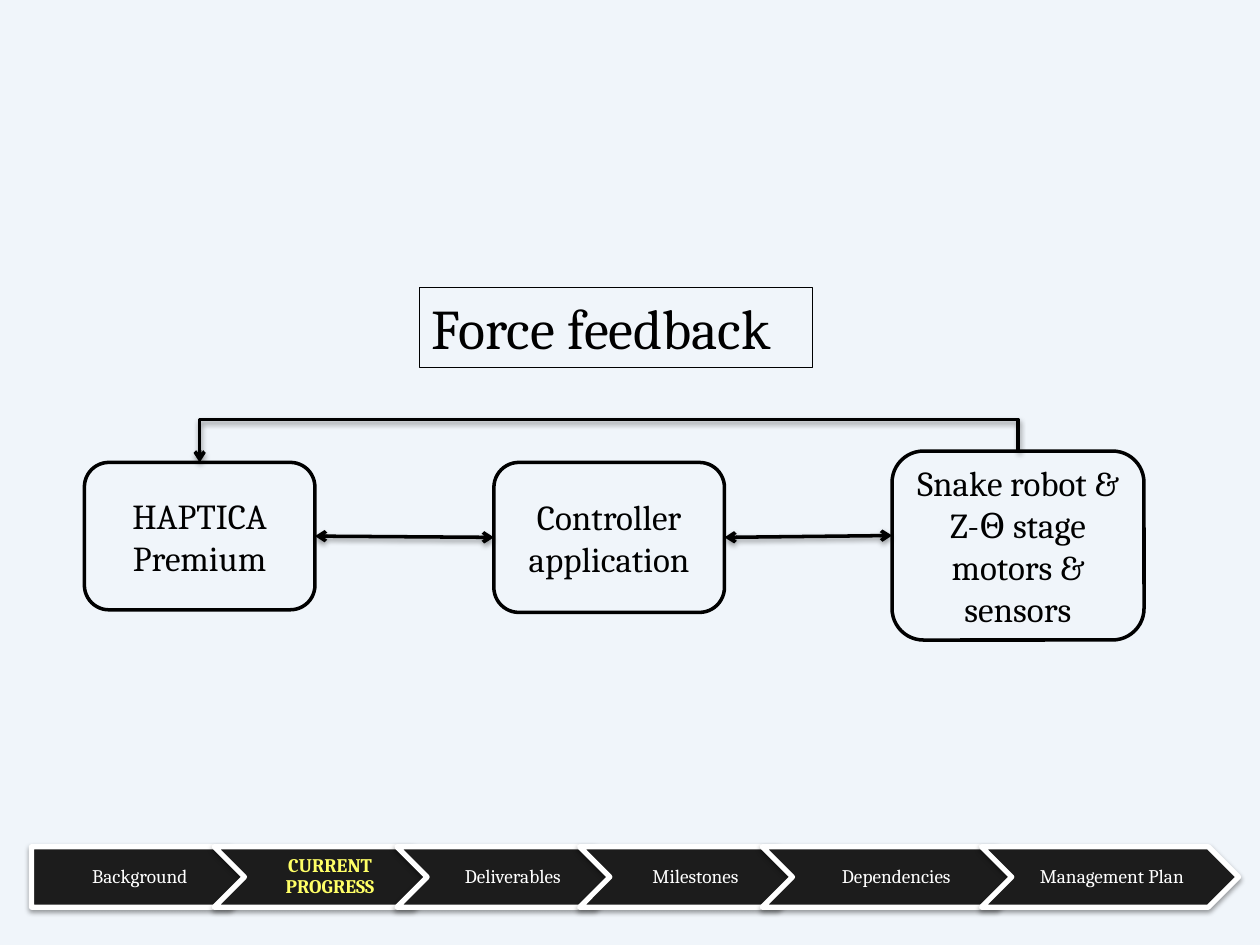
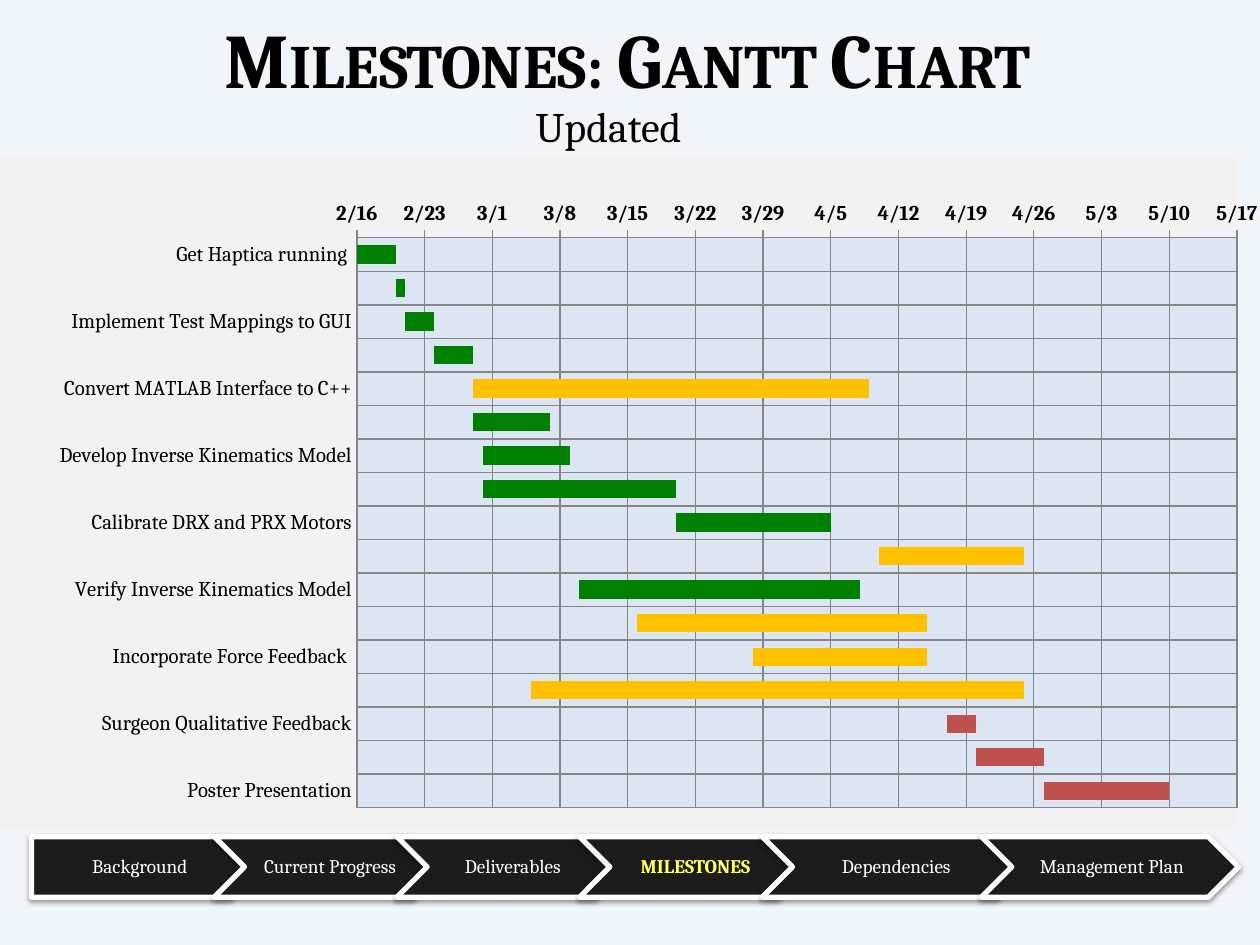
"""Builds two project slides: the force feedback loop and the Gantt chart of milestones."""
from dataclasses import dataclass

from lxml.etree import SubElement
from pptx import Presentation
from pptx.chart.data import CategoryChartData
from pptx.dml.color import RGBColor
from pptx.enum.chart import XL_CHART_TYPE as Chart, XL_TICK_MARK as Tick
from pptx.enum.shapes import MSO_CONNECTOR as Conn, MSO_SHAPE as Geo
from pptx.enum.text import MSO_ANCHOR as Anchor, MSO_AUTO_SIZE as AutoSize, PP_ALIGN as Align
from pptx.oxml import parse_xml
from pptx.oxml.ns import nsdecls, qn
from pptx.util import Inches, Pt


@dataclass(frozen=True)
class Theme:
    font: str = "Cambria"
    ink: str = "000000"
    page: str = "F0F5FA"
    nav: str = "1C1C1C"
    white: str = "FFFFFF"
    active: str = "FFFF66"
    chart_area: str = "F2F2F2"
    plot_area: str = "DCE6F2"
    grid: str = "868686"
    done: str = "008000"
    ongoing: str = "FFC000"
    planned: str = "C0504D"
    title: int = 44
    label: int = 32
    subtitle: int = 24
    card: int = 20
    axis: int = 12
    nav_text: int = 11


T = Theme()


@dataclass(frozen=True)
class Box:
    left: float
    top: float
    width: float
    height: float

    @property
    def middle(self) -> float:
        return self.left + self.width / 2

    def emu(self) -> tuple:
        return tuple(Inches(v) for v in (self.left, self.top, self.width, self.height))


@dataclass(frozen=True)
class Card:
    text: str
    box: Box


@dataclass(frozen=True)
class Section:
    name: str
    width: float = 1.81


@dataclass(frozen=True)
class Task:
    start: int
    days: int
    color: str
    name: str = ""


CARDS = (
    Card("HAPTICA Premium", Box(0.67, 3.67, 1.83, 1.17)),
    Card("Controller application", Box(3.92, 3.67, 1.83, 1.19)),
    Card("Snake robot & Z-Θ stage motors & sensors", Box(7.08, 3.58, 2, 1.5)),
)
LOOP_TOP = 3.33
LINK_Y = 4.25

SECTIONS = (
    Section("Background"),
    Section("Current Progress"),
    Section("Deliverables"),
    Section("Milestones"),
    Section("Dependencies", 2.1),
    Section("Management Plan", 2.04),
)
NAV_LEFT, NAV_HEIGHT, NAV_OVERLAP = 0.25, 0.48, 0.36

FIRST_DAY, WEEK, WEEKS = 40955, 7, 13
TASKS = (
    Task(40955, 4, T.done, "Get Haptica running "),
    Task(40959, 1, T.done),
    Task(40960, 3, T.done, "Implement Test Mappings to GUI"),
    Task(40963, 4, T.done),
    Task(40967, 41, T.ongoing, "Convert MATLAB Interface to C++"),
    Task(40967, 8, T.done),
    Task(40968, 9, T.done, "Develop Inverse Kinematics Model"),
    Task(40968, 20, T.done),
    Task(40988, 16, T.done, "Calibrate DRX and PRX Motors"),
    Task(41009, 15, T.ongoing),
    Task(40978, 29, T.done, "Verify Inverse Kinematics Model"),
    Task(40984, 30, T.ongoing),
    Task(40996, 18, T.ongoing, "Incorporate Force Feedback "),
    Task(40973, 51, T.ongoing),
    Task(41016, 3, T.planned, "Surgeon Qualitative Feedback"),
    Task(41019, 7, T.planned),
    Task(41026, 13, T.planned, "Poster Presentation"),
)


def rgb(color: str) -> RGBColor:
    return RGBColor.from_string(color)


def add_shadow(sp) -> None:
    """Gives a shape or connector the soft shadow below it."""
    spPr = sp._element.spPr
    for old in spPr.findall(qn("a:effectLst")):
        spPr.remove(old)
    spPr.append(parse_xml(
        f'<a:effectLst {nsdecls("a")}><a:outerShdw blurRad="{Pt(3.1)}" dist="{Pt(1.6)}" '
        f'dir="5400000" rotWithShape="0"><a:srgbClr val="{T.ink}"><a:alpha val="38000"/>'
        '</a:srgbClr></a:outerShdw></a:effectLst>'))


def write(sp, text: str, size: int, color: str = T.ink, bold: bool = False,
          align: Align = Align.CENTER, anchor: Anchor = Anchor.MIDDLE):
    """Writes one paragraph and returns it."""
    tf = sp.text_frame
    tf.word_wrap = True
    tf.vertical_anchor = anchor
    p = tf.paragraphs[0]
    p.alignment = align
    p.add_run().text = text
    p.font.name, p.font.size, p.font.bold = T.font, Pt(size), bold
    p.font.color.rgb = rgb(color)
    return p


def add_outline(s, geo: Geo, box: Box, weight: float, line: str = T.ink):
    """Draws an unfilled preset shape with a line."""
    sp = s.shapes.add_shape(geo, *box.emu())
    sp.shadow.inherit = False
    sp.fill.background()
    sp.line.color.rgb = rgb(line)
    sp.line.width = Pt(weight)
    return sp


def add_card(s, card: Card):
    sp = add_outline(s, Geo.ROUNDED_RECTANGLE, card.box, 2)
    write(sp, card.text, T.card)
    return sp


def add_arrow(s, kind: Conn, start: tuple, end: tuple, *ends: str):
    """Draws a shadowed connector with arrowheads at the named ends."""
    c = s.shapes.add_connector(kind, *(Inches(v) for v in (*start, *end)))
    c.line.color.rgb = rgb(T.ink)
    c.line.width = Pt(2)
    for name in ends:
        SubElement(c.line._get_or_add_ln(), qn(f"a:{name}"), type="arrow")
    add_shadow(c)
    return c


def add_loop(s, source: Box, target: Box) -> None:
    """Leads an elbow arrow from the top of one box over to the top of another."""
    span, drop = source.middle - target.middle, target.top - source.top
    x, y = (source.middle + target.middle) / 2, (source.top + target.top) / 2
    c = add_arrow(s, Conn.ELBOW, (x + drop / 2, y + span / 2),
                  (x - drop / 2, y - span / 2), "tailEnd")
    spPr = c._element.spPr
    spPr.find(qn("a:xfrm")).set("rot", "16200000")
    guides = spPr.find(qn("a:prstGeom")).find(qn("a:avLst"))
    bend = round((LOOP_TOP - source.top) / drop * 100000)
    SubElement(guides, qn("a:gd"), name="adj1", fmla=f"val {bend}")


def add_nav(s, top: float, current: str) -> None:
    """Draws the chevron band and marks the current section."""
    left = NAV_LEFT
    for i, section in enumerate(SECTIONS):
        sp = add_outline(s, Geo.CHEVRON if i else Geo.PENTAGON,
                         Box(left, top, section.width, NAV_HEIGHT), 3, T.white)
        sp.fill.solid()
        sp.fill.fore_color.rgb = rgb(T.nav)
        add_shadow(sp)
        active = section.name == current
        p = write(sp, section.name.upper() if active else section.name, T.nav_text,
                  T.active if active else T.white, active)
        p.line_spacing = 0.9
        tf = sp.text_frame
        tf.margin_left, tf.margin_right = Inches(0.05), Inches(0.02)
        tf.margin_top = tf.margin_bottom = Inches(0.03)
        left += section.width - NAV_OVERLAP


def solid(color: str):
    """Returns chart area properties with a plain fill and no line."""
    return parse_xml(f'<c:spPr {nsdecls("c", "a")}><a:solidFill><a:srgbClr val="{color}"/>'
                     '</a:solidFill><a:ln><a:noFill/></a:ln></c:spPr>')


def style_areas(chart, plot: Box) -> None:
    """Fills the chart and plot areas and places the plot by fractions."""
    space = chart._chartSpace
    space.find(qn("c:chart")).addnext(solid(T.chart_area))
    area = space.find(qn("c:chart")).find(qn("c:plotArea"))
    for old in area.findall(qn("c:layout")):
        area.remove(old)
    layout = SubElement(area, qn("c:layout"))
    area.insert(0, layout)
    manual = SubElement(layout, qn("c:manualLayout"))
    for tag, val in (("layoutTarget", "inner"), ("xMode", "edge"), ("yMode", "edge"),
                     ("x", plot.left), ("y", plot.top), ("w", plot.width), ("h", plot.height)):
        SubElement(manual, qn(f"c:{tag}"), val=str(val))
    area.append(solid(T.plot_area))


def add_gantt(s, box: Box) -> None:
    """Draws the tasks as stacked bars behind an invisible start series."""
    data = CategoryChartData()
    data.categories = [task.name for task in TASKS]
    data.add_series("Series 1", [task.start for task in TASKS])
    data.add_series("Series 2", [task.days for task in TASKS])
    chart = s.shapes.add_chart(Chart.BAR_STACKED, *box.emu(), data).chart
    chart.has_legend = chart.has_title = False
    style_areas(chart, Box(0.29, 0.12, 0.71, 0.85))
    chart.font.name, chart.font.size = T.font, Pt(T.axis)
    chart.font.color.rgb = rgb(T.ink)

    tasks, dates = chart.category_axis, chart.value_axis
    for axis, tick in ((tasks, Tick.INSIDE), (dates, Tick.CROSS)):
        axis.has_major_gridlines = True
        axis.major_tick_mark, axis.minor_tick_mark = tick, Tick.NONE
        for line in (axis.format.line, axis.major_gridlines.format.line):
            line.color.rgb = rgb(T.grid)
            line.width = Pt(0.75)
    tasks.reverse_order = True
    dates.minimum_scale, dates.maximum_scale = FIRST_DAY, FIRST_DAY + WEEK * WEEKS
    dates.major_unit = WEEK
    dates.tick_labels.number_format = "m/d;@"
    dates.tick_labels.number_format_is_linked = False
    dates.tick_labels.font.bold = True

    plot = chart.plots[0]
    plot.gap_width, plot.overlap, plot.vary_by_categories = 82, 100, False
    starts, bars = plot.series
    starts.format.fill.background()
    bars.format.fill.solid()
    bars.format.fill.fore_color.rgb = rgb(T.planned)
    for i, task in enumerate(TASKS):
        if task.color != T.planned:
            fill = bars.points[i].format.fill
            fill.solid()
            fill.fore_color.rgb = rgb(task.color)


def build_feedback(s) -> None:
    left, center, right = (add_card(s, card) for card in CARDS)
    first, second, third = (card.box for card in CARDS)
    both = ("headEnd", "tailEnd")
    link = add_arrow(s, Conn.STRAIGHT, (first.left + first.width, LINK_Y),
                     (second.left, LINK_Y), *both)
    link.begin_connect(left, 3)
    link.end_connect(center, 1)
    link = add_arrow(s, Conn.STRAIGHT, (second.left + second.width, LINK_Y),
                     (third.left, LINK_Y), *both)
    link.begin_connect(center, 3)
    add_loop(s, third, first)
    label = add_outline(s, Geo.RECTANGLE, Box(3.33, 2.28, 3.12, 0.64), 0.75)
    write(label, "Force feedback", T.label, align=Align.LEFT, anchor=Anchor.TOP)
    add_nav(s, 6.72, "Current Progress")


def build_milestones(s) -> None:
    add_gantt(s, Box(-0.02, 1.25, 10, 5.32))
    add_nav(s, 6.64, "Milestones")
    title = s.shapes.add_textbox(*Box(0.21, -0.17, 9.54, 1.25).emu())
    p = write(title, "Milestones: Gantt Chart", T.title, bold=True)
    p.runs[0]._r.get_or_add_rPr().set("cap", "small")
    subtitle = s.shapes.add_textbox(*Box(2.83, 0.75, 4, 0.5).emu())
    write(subtitle, "Updated", T.subtitle, anchor=Anchor.TOP)
    subtitle.text_frame.auto_size = AutoSize.SHAPE_TO_FIT_TEXT


def main() -> None:
    prs = Presentation()
    prs.slide_width, prs.slide_height = Inches(10), Inches(7.5)
    fill = prs.slide_master.background.fill
    fill.solid()
    fill.fore_color.rgb = rgb(T.page)
    for build in (build_feedback, build_milestones):
        build(prs.slides.add_slide(prs.slide_layouts[6]))
    prs.save("out.pptx")


if __name__ == "__main__":
    main()
